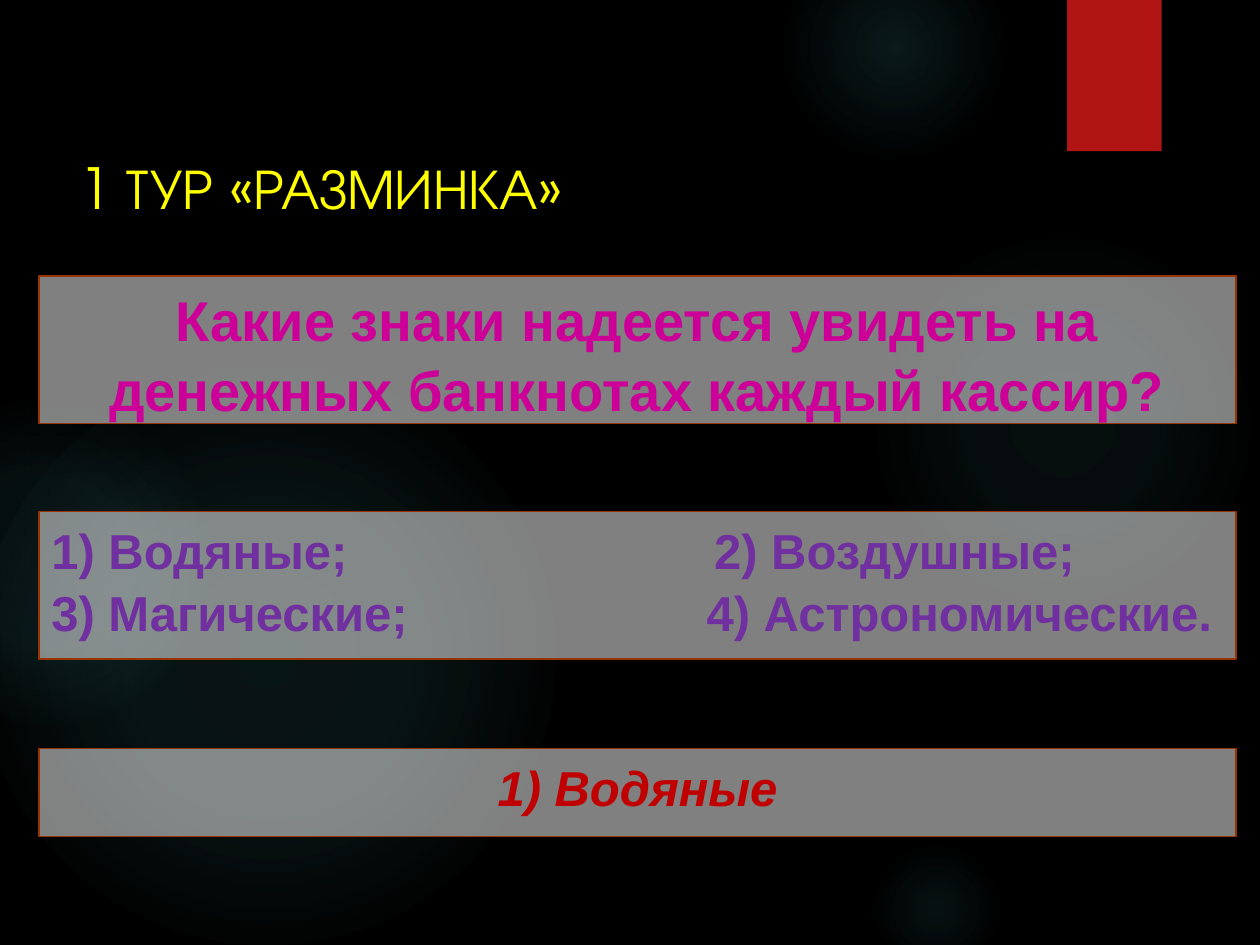
"""Build a quiz slide with a question, its choices and the answer."""
from dataclasses import dataclass
from typing import Optional

from pptx import Presentation
from pptx.dml.color import RGBColor
from pptx.enum.shapes import MSO_SHAPE as Kind
from pptx.enum.text import MSO_ANCHOR as Anchor, PP_ALIGN as Align
from pptx.oxml import parse_xml
from pptx.oxml.ns import nsdecls, qn
from pptx.util import Inches, Pt

BLACK = RGBColor(0x00, 0x00, 0x00)
WHITE = RGBColor(0xFF, 0xFF, 0xFF)
TEAL = RGBColor(0x50, 0xB9, 0xC1)
RED = RGBColor(0xB0, 0x15, 0x13)
RUST = RGBColor(0x99, 0x33, 0x00)
YELLOW = RGBColor(0xFF, 0xFF, 0x00)
PINK = RGBColor(0xCC, 0x00, 0x99)
PURPLE = RGBColor(0x70, 0x30, 0xA0)
CRIMSON = RGBColor(0xC0, 0x00, 0x00)


@dataclass
class Glow:
    left: float
    top: float
    size: float
    stops: tuple


@dataclass
class Panel:
    top: float
    height: float
    lines: tuple
    font: dict
    align: Align = Align.CENTER
    tabs: Optional[tuple] = None


GLOWS = (
    Glow(6.89, 1.83, 3.08, ((0, 7), (36, 6), (69, 0))),
    Glow(6.22, -0.5, 1.75, ((0, 14), (36, 7), (73, 0))),
    Glow(6.89, 6.67, 1.08, ((0, 9), (36, 5), (66, 0))),
    Glow(-0.17, 2.92, 4.58, ((0, 11), (36, 10), (75, 0))),
    Glow(-0.92, 3.17, 2.58, ((0, 8), (36, 8), (72, 0))),
)
BOLD = {"name": "Arial", "bold": True, "size": Pt(28)}
PANELS = (
    Panel(4.06, 1.17,
          ("1) Водяные;\t2) Воздушные;", "3) Магические;\t4) Астрономические."),
          BOLD | {"color": PURPLE}, Align.LEFT, (5.26, 5.2)),
    Panel(5.94, 0.7, ("1) Водяные",),
          BOLD | {"color": CRIMSON, "italic": True}),
    Panel(2.19, 1.17,
          ("Какие знаки надеется увидеть на денежных банкнотах каждый кассир?",),
          BOLD | {"color": PINK, "size": Pt(32)}),
)


def style(font, form: dict) -> None:
    for key, value in form.items():
        if key == "color":
            font.color.rgb = value
        else:
            setattr(font, key, value)


def add_box(slide, kind: Kind, *area: float):
    box = slide.shapes.add_shape(kind, *map(Inches, area))
    box.shadow.inherit = False
    box.line.fill.background()
    return box


def add_glow(slide, glow: Glow) -> None:
    disc = add_box(slide, Kind.OVAL, glow.left, glow.top, glow.size, glow.size)
    stops = "".join(
        f'<a:gs pos="{pos * 1000}"><a:srgbClr val="{TEAL}">'
        f'<a:alpha val="{alpha * 1000}"/></a:srgbClr></a:gs>'
        for pos, alpha in glow.stops)
    fill = parse_xml(
        f'<a:gradFill {nsdecls("a")}><a:gsLst>{stops}</a:gsLst>'
        '<a:path path="circle"><a:fillToRect l="50000" t="50000" '
        'r="50000" b="50000"/></a:path></a:gradFill>')
    disc.element.spPr.find(qn("a:prstGeom")).addnext(fill)


def add_panel(slide, panel: Panel) -> None:
    box = add_box(slide, Kind.RECTANGLE, 0.31, panel.top, 9.5, panel.height)
    box.fill.solid()
    box.fill.fore_color.rgb = WHITE
    tint = box.element.spPr.find(qn("a:solidFill")).find(qn("a:srgbClr"))
    tint.append(parse_xml(f'<a:alpha {nsdecls("a")} val="50000"/>'))
    box.line.color.rgb = RUST
    box.line.width = Pt(0.75)
    frame = box.text_frame
    frame.word_wrap = True
    frame.vertical_anchor = Anchor.TOP
    for row, text in enumerate(panel.lines):
        para = frame.add_paragraph() if row else frame.paragraphs[0]
        para.alignment = panel.align
        para.line_spacing = 1.05
        run = para.add_run()
        run.text = text
        style(run.font, panel.font)
        if panel.tabs:
            para._p.get_or_add_pPr().append(parse_xml(
                f'<a:tabLst {nsdecls("a")}><a:tab '
                f'pos="{Inches(panel.tabs[row])}" algn="l"/></a:tabLst>'))


def set_title(slide, text: str) -> None:
    title = slide.shapes.title
    title.left, title.top = Inches(0.53), Inches(0.5)
    title.width, title.height = Inches(7.72), Inches(1.53)
    frame = title.text_frame
    frame.word_wrap = True
    frame.vertical_anchor = Anchor.BOTTOM
    frame.margin_bottom = Inches(0.28)
    para = frame.paragraphs[0]
    para.alignment = Align.LEFT
    run = para.add_run()
    run.text = text
    style(run.font, {"name": "TeX Gyre Adventor", "size": Pt(32.4),
                     "color": YELLOW})


def main() -> None:
    deck = Presentation()
    deck.slide_width, deck.slide_height = Inches(10), Inches(7.5)
    slide = deck.slides.add_slide(deck.slide_layouts[5])
    slide.background.fill.solid()
    slide.background.fill.fore_color.rgb = BLACK
    for glow in GLOWS:
        add_glow(slide, glow)
    flag = add_box(slide, Kind.RECTANGLE, 8.47, 0, 0.75, 1.2)
    flag.fill.solid()
    flag.fill.fore_color.rgb = RED
    set_title(slide, "1 ТУР «РАЗМИНКА»")
    for panel in PANELS:
        add_panel(slide, panel)
    deck.save("out.pptx")


if __name__ == "__main__":
    main()
